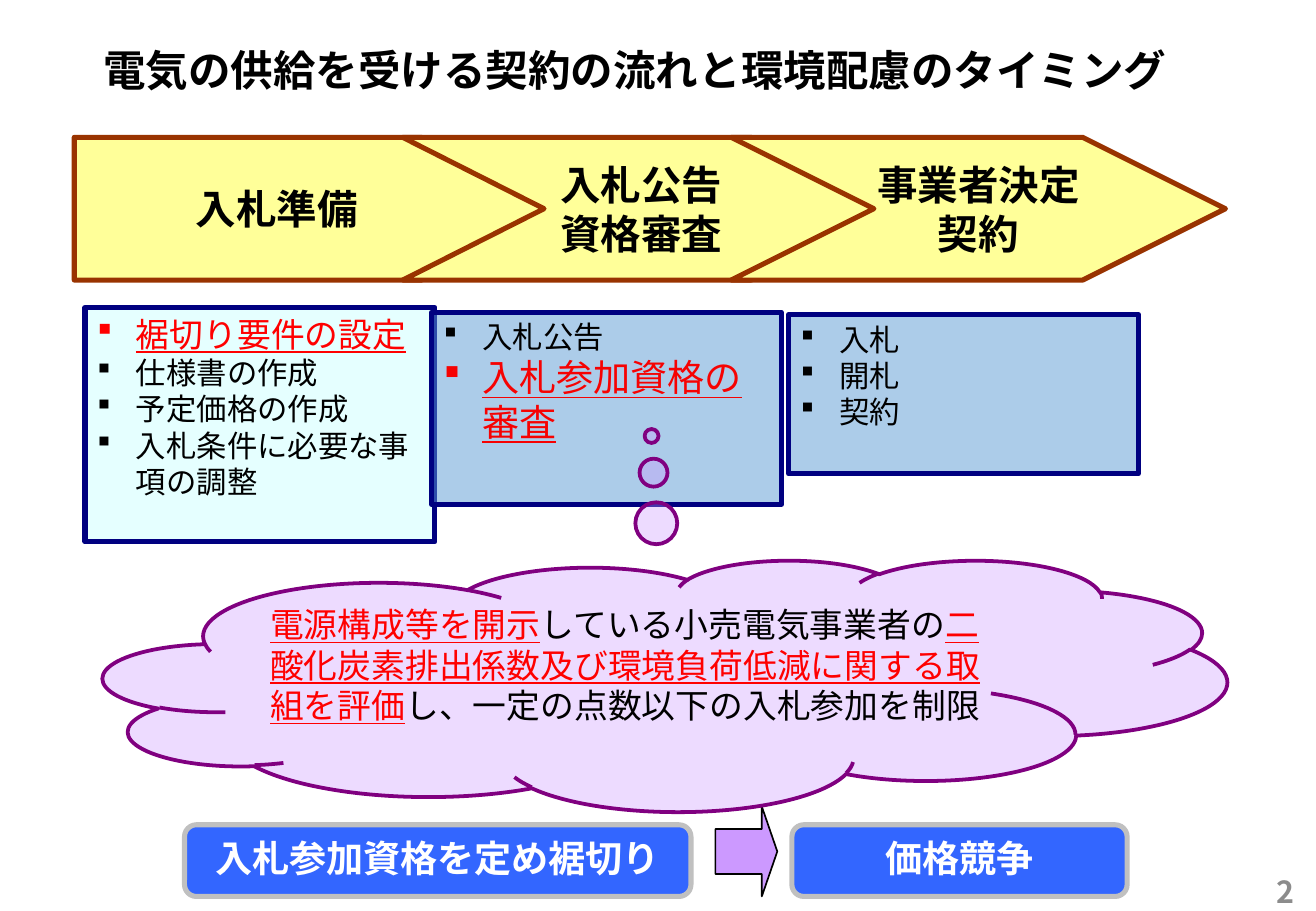
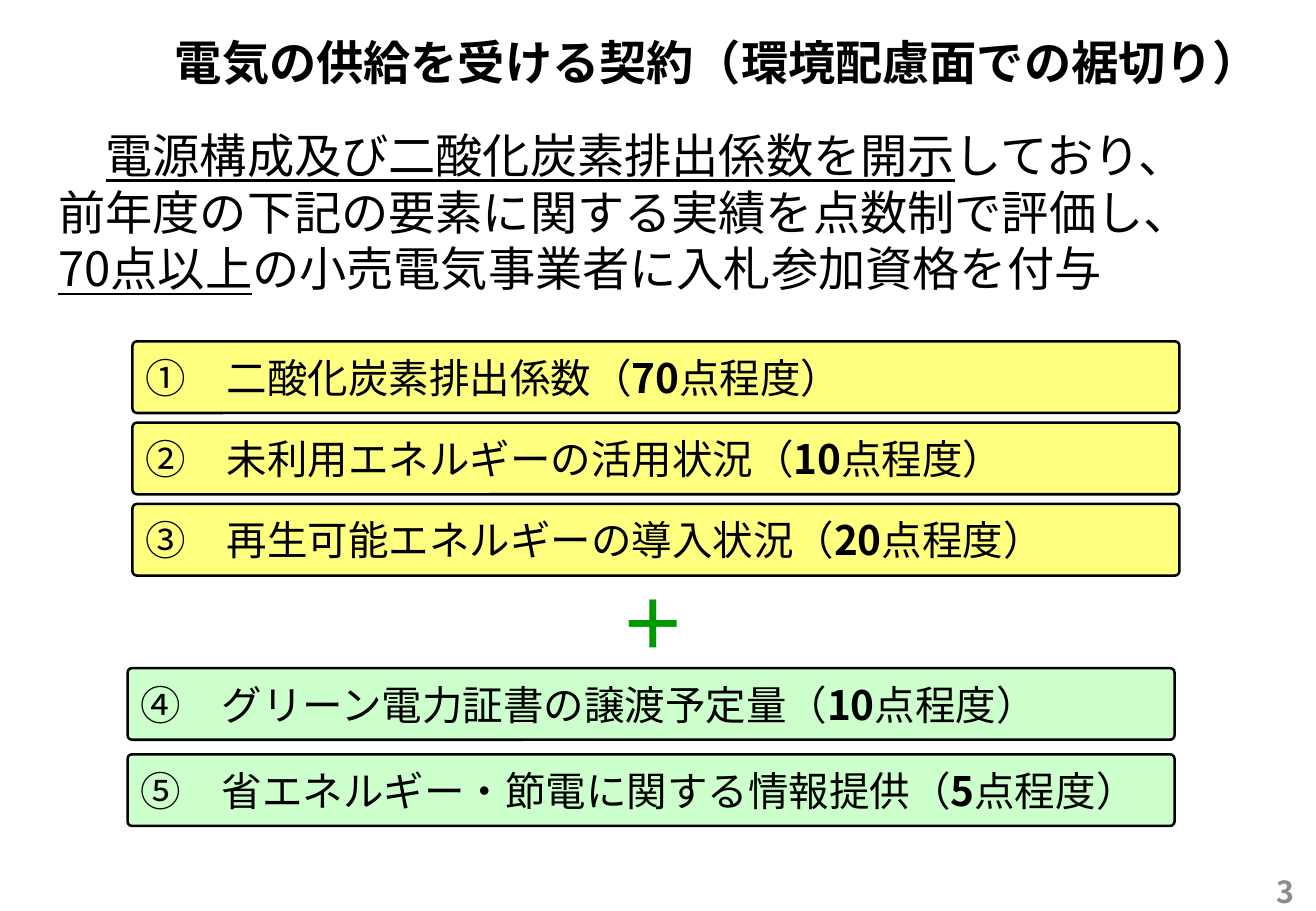
from dataclasses import dataclass

from lxml.etree import SubElement
from pptx import Presentation
from pptx.dml.color import RGBColor
from pptx.enum.shapes import MSO_SHAPE
from pptx.enum.text import MSO_ANCHOR, MSO_AUTO_SIZE, PP_ALIGN
from pptx.oxml.ns import qn
from pptx.util import Pt


@dataclass(frozen=True)
class Theme:
    font: str = "Noto Sans CJK JP"
    black: str = "000000"
    white: str = "FFFFFF"
    red: str = "FF0000"
    alert: str = "F60202"
    gray: str = "8C8C8C"
    silver: str = "C0C0C0"
    navy: str = "000080"
    brown: str = "993300"
    cream: str = "FFFF99"
    aqua: str = "CCFFFF"
    steel: str = "5B9BD5"
    blue: str = "3366FF"
    lilac: str = "CC99FF"
    purple: str = "800080"
    yellow: str = "FFFF00"
    lime: str = "00FF00"
    green: str = "009900"
    small: float = 18
    note: float = 20
    label: float = 22
    head: float = 24
    lead: float = 28
    sign: float = 40
    leading: float = 1.2


T = Theme()


# Shared helpers
def apply(target, values):
    for key, value in values.items():
        setattr(target, key, value)


def place(shape, box):
    names = ("left", "top", "width", "height")
    apply(shape, {key: Pt(value) for key, value in zip(names, box)})


def paint(shape, fill, line, weight, alpha=100):
    shape.shadow.inherit = False
    shape.fill.solid()
    shape.fill.fore_color.rgb = RGBColor.from_string(fill)
    if alpha < 100:
        color = shape.element.spPr.find(".//" + qn("a:srgbClr"))
        SubElement(color, qn("a:alpha")).set("val", str(alpha * 1000))
    shape.line.color.rgb = RGBColor.from_string(line)
    shape.line.width = Pt(weight)


def add(slide, kind, box, look, adjust=()):
    shape = slide.shapes.add_shape(kind, *map(Pt, box))
    paint(shape, *look)
    for i, value in enumerate(adjust):
        shape.adjustments[i] = value
    return shape


def add_run(para, text, size, color=T.black, bold=False, line=False):
    run = para.add_run()
    run.text = text
    apply(run.font, {"name": T.font, "size": Pt(size), "bold": bold,
                     "underline": line})
    run.font.color.rgb = RGBColor.from_string(color)
    props = run.font._element
    props.set("lang", "ja-JP")
    SubElement(props, qn("a:ea")).set("typeface", T.font)


def write(shape, paras, align=PP_ALIGN.LEFT, anchor=MSO_ANCHOR.MIDDLE,
          insets=(7.2, 3.6, 7.2, 3.6), wrap=True, margin=0, indent=0,
          bullet=False, spacing=None):
    """Each paragraph is a list of runs; each run is a dict for add_run."""
    frame = shape.text_frame
    sides = ("margin_left", "margin_top", "margin_right", "margin_bottom")
    apply(frame, {"auto_size": MSO_AUTO_SIZE.NONE, "word_wrap": wrap,
                  "vertical_anchor": anchor,
                  **{key: Pt(value) for key, value in zip(sides, insets)}})
    for i, runs in enumerate(paras):
        para = frame.add_paragraph() if i else frame.paragraphs[0]
        props = para._p.get_or_add_pPr()
        props.set("marL", str(Pt(margin)))
        props.set("indent", str(Pt(indent)))
        if bullet:
            SubElement(props, qn("a:buFont")).set("typeface", "Wingdings")
            SubElement(props, qn("a:buChar")).set("char", "§")
        else:
            SubElement(props, qn("a:buNone"))
        tall = max(run["size"] for run in runs)
        apply(para, {"alignment": align, "space_before": Pt(0),
                     "line_spacing": spacing or Pt(tall * T.leading)})
        for run in runs:
            add_run(para, **run)


def start(deck, layout, title, size, box, number):
    """Open a slide with its title and page number."""
    slide = deck.slides.add_slide(deck.slide_layouts[layout])
    place(slide.shapes.title, box)
    write(slide.shapes.title, [[dict(text=title, size=size, bold=True)]],
          spacing=0.9)
    page = slide.shapes.add_textbox(*map(Pt, (737.3, 513.4, 49.7, 29.5)))
    write(page, [[dict(text=str(number), size=T.small, color=T.gray,
                       bold=True)]], PP_ALIGN.CENTER)
    return slide


# Flow slide
def stage(slide, card, box, kind, bend, heads, inset, spot, look, items):
    """A step arrow filling the box and a list card offset from it."""
    x, y, w, h = box
    arrow = add(slide, kind, box, (T.cream, T.brown, 3), [bend])
    write(arrow, [[dict(text=head, size=T.head, bold=True)] for head in heads],
          PP_ALIGN.CENTER, insets=(0, 3.6, inset, 3.6), wrap=False)
    dx, dy, tall = spot
    place(card, (x + dx, y + dy, 207.4, tall))
    paint(card, look, T.navy, 3, 50)
    write(card, [[item] for item in items], anchor=MSO_ANCHOR.TOP,
          margin=23, indent=-23, bullet=True)


def cloud(slide, box):
    shape = add(slide, MSO_SHAPE.CLOUD_CALLOUT, box,
                (T.lilac, T.purple, 2.25, 35), (-0.012, -0.993))
    key = dict(size=T.note, color=T.red, line=True)
    write(shape, [[
        dict(text="電源構成等を開示", **key),
        dict(text="している小売電気事業者の", size=T.note),
        dict(text="二酸化炭素排出係数及び環境負荷低減に関する取組を評価", **key),
        dict(text="し、一定の点数以下の入札参加を制限", size=T.note),
    ]], anchor=MSO_ANCHOR.TOP)


def outcome(slide, box):
    """Two buttons at the ends of the box, with an arrow between them."""
    x, y, w, h = box
    first, last = 300.2, 198.7
    for left, width, text in ((x, first, "入札参加資格を定め裾切り"),
                              (x + w - last, last, "価格競争")):
        button = add(slide, MSO_SHAPE.ROUNDED_RECTANGLE, (left, y, width, h),
                     (T.blue, T.silver, 3))
        write(button, [[dict(text=text, size=T.label, color=T.white,
                             bold=True)]],
              PP_ALIGN.CENTER, insets=(7.2, 0, 7.2, 3.6))
    add(slide, MSO_SHAPE.RIGHT_ARROW, (x + first + 14.4, y - 10.8, 36.7, 53.3),
        (T.lilac, T.black, 1), (0.5, 0.25))


def flow(deck):
    slide = start(deck, 4, "電気の供給を受ける契約の流れと環境配慮のタイミング",
                  25.2, (54, 25.9, 726.5, 34.6), 2)
    plain = dict(size=T.small)
    steps = [
        (288.7, MSO_SHAPE.PENTAGON, 0.98, ["入札準備"], 7.2,
         (6.4, 100.8, 139), T.aqua,
         [dict(text="裾切り要件の設定", size=T.note, color=T.red, line=True),
          dict(text="仕様書の作成", **plain),
          dict(text="予定価格の作成", **plain),
          dict(text="入札条件に必要な事項の調整", **plain)]),
        (290.2, MSO_SHAPE.CHEVRON, 0.99, ["入札公告", "資格審査"], 7.2,
         (17, 103.7, 113.8), T.steel,
         [dict(text="入札公告", **plain),
          dict(text="入札参加資格の審査", size=T.label, color=T.alert,
               line=True)]),
        (293, MSO_SHAPE.CHEVRON, 1, ["事業者決定", "契約"], 0,
         (34, 105.1, 94.3), T.steel,
         [dict(text=text, **plain) for text in ("入札", "開札", "契約")]),
    ]
    *cards, spare = list(slide.placeholders)[1:]
    spare.element.getparent().remove(spare.element)
    for i, (card, (wide, *rest)) in enumerate(zip(cards, steps)):
        stage(slide, card, (44 + 194.7 * i, 81.4, wide, 84.6), *rest)
    outcome(slide, (109.4, 488.9, 558.7, 42.5))
    cloud(slide, (61.2, 331.9, 666, 149))


# Scoring slide
def rows(slide, box, step, fill, alpha, items):
    """Bars of one size, stacked downward at an equal step."""
    x, y, w, h = box
    for i, (name, points) in enumerate(items):
        bar = add(slide, MSO_SHAPE.ROUNDED_RECTANGLE, (x, y + step * i, w, h),
                  (fill, T.black, 1.5, alpha), [0.063])
        write(bar, [[dict(text=name + "（", size=T.head),
                     dict(text=points, size=T.head, bold=True),
                     dict(text="点程度）", size=T.head)]],
              margin=13.5, indent=-13.5)


def lead(body, box):
    place(body, box)
    write(body, [[
        dict(text="電源構成及び二酸化炭素排出係数を開示", size=T.lead, line=True),
        dict(text="しており、前年度の下記の要素に関する実績を点数制で評価し、",
             size=T.lead),
        dict(text="70点以上", size=T.lead, line=True),
        dict(text="の小売電気事業者に入札参加資格を付与", size=T.lead),
    ]], anchor=MSO_ANCHOR.TOP, indent=T.lead)


def score(deck):
    slide = start(deck, 1, "電気の供給を受ける契約（環境配慮面での裾切り）",
                  T.lead, (96.5, 18.7, 684, 39.6), 3)
    lead(slide.placeholders[1], (27.4, 71.3, 697.7, 108.7))
    rows(slide, (78.5, 202.3, 620.6, 42.5), 48.2, T.yellow, 50, [
        ("①　二酸化炭素排出係数", "70"),
        ("②　未利用エネルギーの活用状況", "10"),
        ("③　再生可能エネルギーの導入状況", "20"),
    ])
    plus = slide.shapes.add_textbox(*map(Pt, (360, 341.3, 51.1, 55.4)))
    write(plus, [[dict(text="＋", size=T.sign, color=T.green, bold=True)]],
          anchor=MSO_ANCHOR.TOP)
    rows(slide, (75.6, 396, 620.6, 42.5), 51.1, T.lime, 20, [
        ("④　グリーン電力証書の譲渡予定量", "10"),
        ("⑤　省エネルギー・節電に関する情報提供", "5"),
    ])


def main():
    deck = Presentation()
    apply(deck, {"slide_width": Pt(780), "slide_height": Pt(540)})
    flow(deck)
    score(deck)
    deck.save("out.pptx")


if __name__ == "__main__":
    main()
